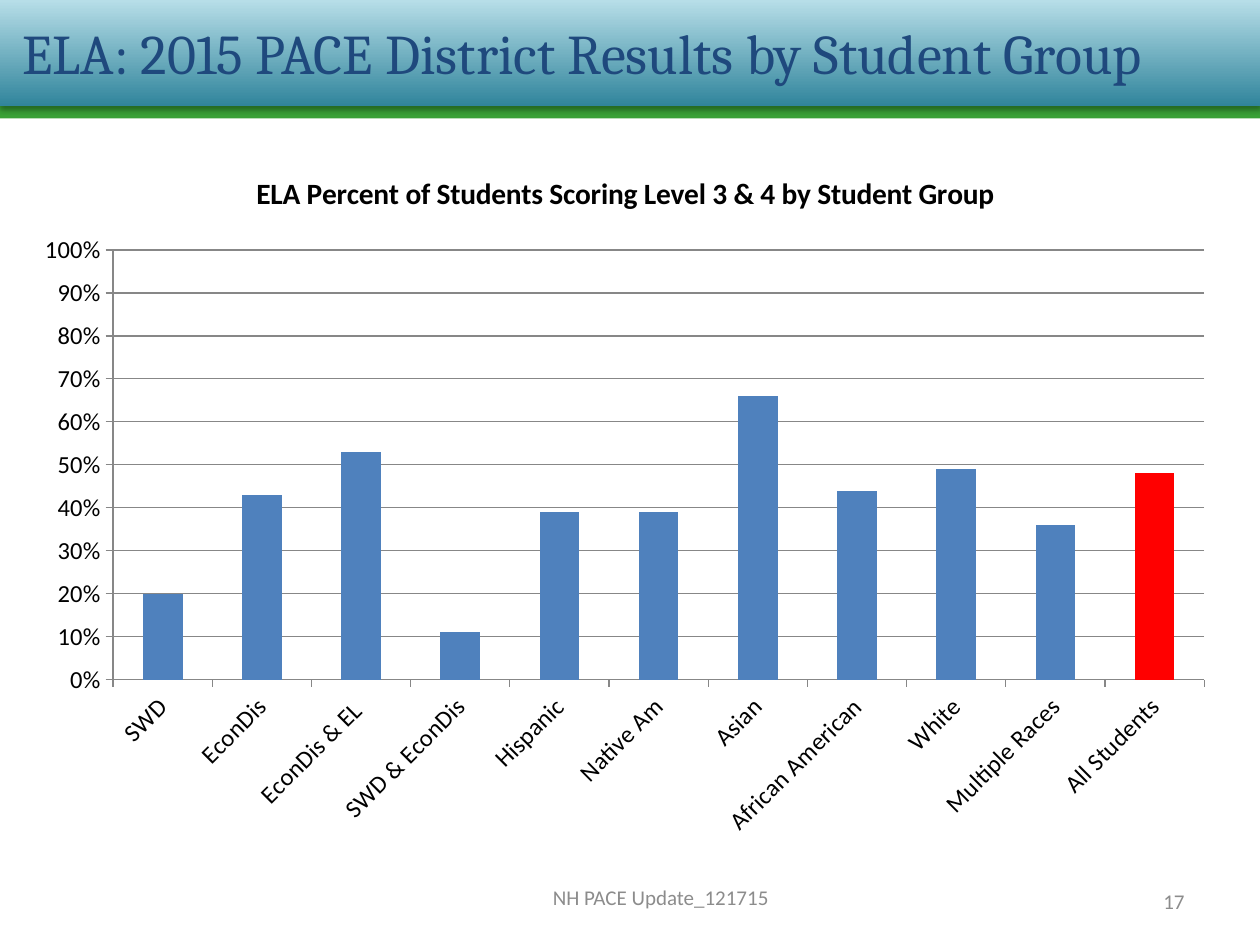
import dataclasses

import pptx
import pptx.chart.data
import pptx.dml.color
import pptx.enum.chart
import pptx.enum.shapes
import pptx.enum.text
import pptx.oxml
import pptx.util

Pt = pptx.util.Pt
Align = pptx.enum.text.PP_ALIGN
DRAWING = "http://schemas.openxmlformats.org/drawingml/2006/main"
CHART = "http://schemas.openxmlformats.org/drawingml/2006/chart"
GRAY = "8C8C8C"
AXIS_GRAY = "878787"


@dataclasses.dataclass(frozen=True)
class Frame:
    left: float
    top: float
    width: float
    height: float

    def lengths(self):
        return Pt(self.left), Pt(self.top), Pt(self.width), Pt(self.height)


@dataclasses.dataclass(frozen=True)
class Label:
    text: str
    frame: Frame
    size: float
    font: str
    color: str
    alignment: Align


LABELS = [
    Label("ELA: 2015 PACE District Results by Student Group",
          Frame(5.76, 10.08, 699.12, 38.88), 32, "Cambria", "1F497D", Align.LEFT),
    Label("17", Frame(599.76, 500.4, 84.24, 28.8), 12, "Calibri", GRAY, Align.RIGHT),
    Label("NH PACE Update_121715",
          Frame(167.76, 498.24, 419.76, 28.8), 12, "Calibri", GRAY, Align.CENTER),
]

RESULTS = {
    "SWD": 0.2,
    "EconDis": 0.43,
    "EconDis & EL ": 0.53,
    "SWD & EconDis": 0.11,
    "Hispanic": 0.39,
    "Native Am": 0.39,
    "Asian": 0.66,
    "African American": 0.44,
    "White": 0.49,
    "Multiple Races": 0.36,
    "All Students": 0.48,
}


def rgb(value: str) -> pptx.dml.color.RGBColor:
    return pptx.dml.color.RGBColor.from_string(value)


def paint(fill, color: str) -> None:
    fill.solid()
    fill.fore_color.rgb = rgb(color)


def style_font(font, name: str, size: float, color: str) -> None:
    font.name = name
    font.size = Pt(size)
    font.color.rgb = rgb(color)


def add_band(page, frame: Frame):
    band = page.shapes.add_shape(pptx.enum.shapes.MSO_SHAPE.RECTANGLE, *frame.lengths())
    band.shadow.inherit = False
    band.line.fill.background()
    return band


def add_header(page) -> None:
    paint(add_band(page, Frame(0, 53.28, 720, 14.4)).fill, "39A036")
    banner = add_band(page, Frame(0, 0, 720, 60.48))
    banner.fill.gradient()
    banner.fill.gradient_angle = 90
    for stop, color, position in zip(banner.fill.gradient_stops, ("31859C", "B7DEE8"), (0, 1)):
        stop.color.rgb = rgb(color)
        stop.position = position
    effects = banner._element.spPr.find(f"{{{DRAWING}}}effectLst")
    effects.append(pptx.oxml.parse_xml(
        f'<a:outerShdw xmlns:a="{DRAWING}" blurRad="{Pt(3.1)}" dist="{Pt(1.8)}" '
        'dir="5400000" rotWithShape="0"><a:srgbClr val="000000">'
        '<a:alpha val="35000"/></a:srgbClr></a:outerShdw>'))


def add_label(page, label: Label) -> None:
    box = page.shapes.add_textbox(*label.frame.lengths())
    box.text_frame.word_wrap = True
    box.text_frame.vertical_anchor = pptx.enum.text.MSO_ANCHOR.MIDDLE
    para = box.text_frame.paragraphs[0]
    para.text = label.text
    para.alignment = label.alignment
    style_font(para.font, label.font, label.size, label.color)


def style_axis(axis) -> None:
    axis.major_tick_mark = pptx.enum.chart.XL_TICK_MARK.OUTSIDE
    axis.minor_tick_mark = pptx.enum.chart.XL_TICK_MARK.NONE
    style_font(axis.tick_labels.font, "Calibri", 14, "000000")
    axis.format.line.color.rgb = rgb(AXIS_GRAY)
    axis.format.line.width = Pt(0.75)


def place_plot(chart, x: float, y: float, width: float, height: float) -> None:
    area = chart._chartSpace.chart.plotArea
    for layout in area.findall(f"{{{CHART}}}layout"):
        area.remove(layout)
    area.insert(0, pptx.oxml.parse_xml(
        f'<c:layout xmlns:c="{CHART}"><c:manualLayout><c:layoutTarget val="inner"/>'
        '<c:xMode val="edge"/><c:yMode val="edge"/>'
        f'<c:x val="{x}"/><c:y val="{y}"/><c:w val="{width}"/><c:h val="{height}"/>'
        '</c:manualLayout></c:layout>'))


def add_results_chart(page, frame: Frame) -> None:
    data = pptx.chart.data.CategoryChartData(number_format="0%")
    data.categories = list(RESULTS)
    data.add_series("Series 1", list(RESULTS.values()))
    chart = page.shapes.add_chart(
        pptx.enum.chart.XL_CHART_TYPE.COLUMN_CLUSTERED, *frame.lengths(), data).chart
    chart.has_legend = False
    style_font(chart.font, "Calibri", 14, "000000")

    chart.has_title = True
    title = chart.chart_title.text_frame.paragraphs[0]
    title.text = "ELA Percent of Students Scoring Level 3 & 4 by Student Group"
    style_font(title.font, "Calibri", 16.8, "000000")
    title.font.bold = True

    plot = chart.plots[0]
    plot.gap_width = 150
    plot.vary_by_categories = False
    series = plot.series[0]
    paint(series.format.fill, "4F81BD")
    paint(series.points[len(RESULTS) - 1].format.fill, "FF0000")

    style_axis(chart.category_axis)
    chart.category_axis._element.txPr.bodyPr.set("rot", "-2700000")
    values = chart.value_axis
    style_axis(values)
    values.minimum_scale = 0
    values.maximum_scale = 1
    values.major_unit = 0.1
    values.tick_labels.number_format = "0%"
    values.tick_labels.number_format_is_linked = False
    values.has_major_gridlines = True
    values.major_gridlines.format.line.color.rgb = rgb(AXIS_GRAY)
    values.major_gridlines.format.line.width = Pt(0.75)
    place_plot(chart, 0.076, 0.146, 0.904, 0.611)


def main() -> None:
    deck = pptx.Presentation()
    deck.slide_width, deck.slide_height = Pt(720), Pt(540)
    page = deck.slides.add_slide(deck.slide_layouts[6])
    add_header(page)
    for label in LABELS:
        add_label(page, label)
    add_results_chart(page, Frame(12.24, 84.24, 689.76, 401.76))
    deck.save("out.pptx")


if __name__ == "__main__":
    main()
